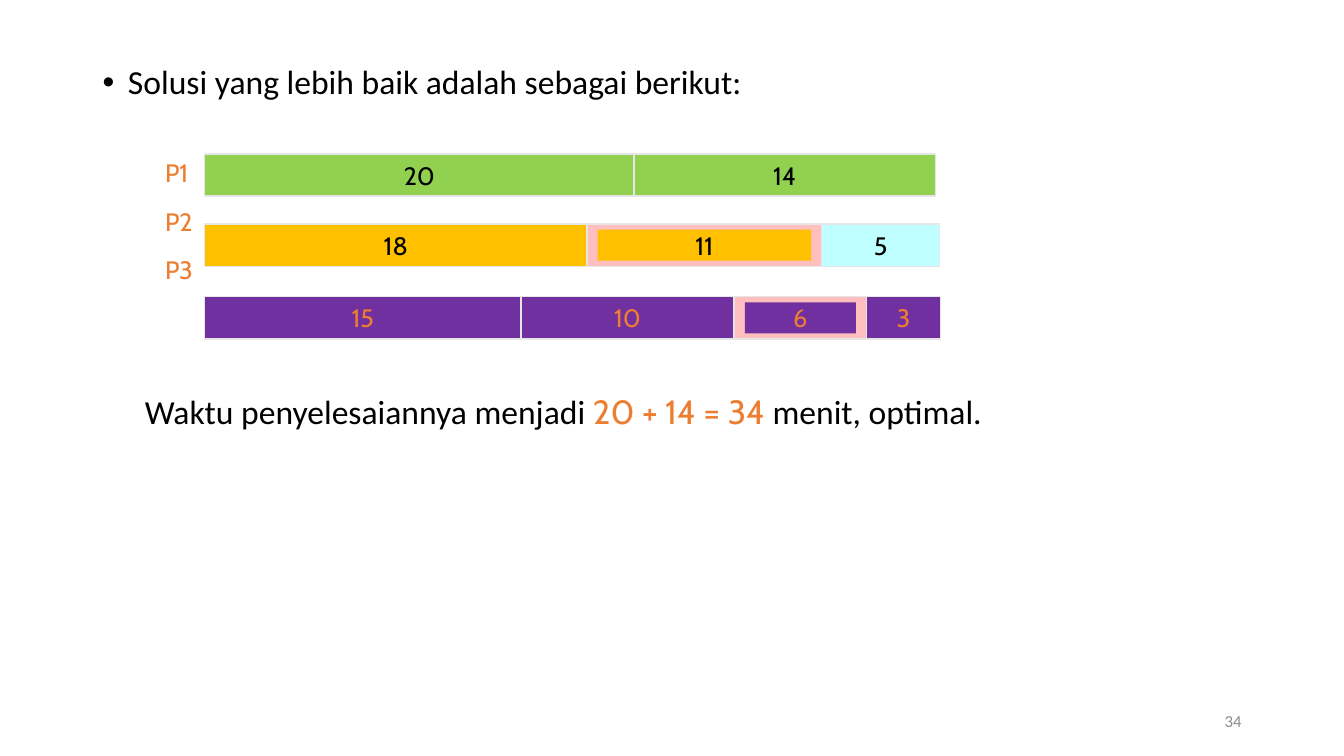
from lxml import etree
from pptx import Presentation
from pptx.dml.color import RGBColor
from pptx.enum.shapes import MSO_SHAPE
from pptx.enum.text import MSO_ANCHOR, PP_ALIGN
from pptx.oxml.ns import qn
from pptx.util import Cm, Pt

RECT = MSO_SHAPE.RECTANGLE
TOP, MIDDLE = MSO_ANCHOR.TOP, MSO_ANCHOR.MIDDLE
LEFT, CENTER, RIGHT = PP_ALIGN.LEFT, PP_ALIGN.CENTER, PP_ALIGN.RIGHT

COLORS = {
    "black": "000000", "orange": "ED7D31", "grey": "8C8C8C", "edge": "E7E6E6",
    "green": "92D050", "amber": "FFC000", "purple": "7030A0",
    "pink": "FFBFBF", "cyan": "BFFFFF",
}
BODY_FONT, CHART_FONT = "Calibri", "Cabin"

BAR_LEFT, BAR_HEIGHT = 5.16, 1.06
FRAME_X, FRAME_Y = 0.27, 0.14
# Per processor: top, text colour, then (minutes, width, fill, framed) per job
SCHEDULE = [
    (3.88, "black", [(20, 10.82, "green", False), (14, 7.59, "green", False)]),
    (5.65, "black", [(18, 9.63, "amber", False), (11, 5.92, "amber", True),
                     (5, 2.97, "cyan", False)]),
    (7.48, "orange", [(15, 7.97, "purple", False), (10, 5.37, "purple", False),
                      (6, 3.34, "purple", True), (3, 1.86, "purple", False)]),
]


def rgb(name):
    return RGBColor.from_string(COLORS[name])


def add_text(p, text, size=18, font=CHART_FONT, color="black", align=None):
    r = p.add_run()
    r.text = text
    r.font.size, r.font.name = Pt(size), font
    r.font.color.rgb = rgb(color)
    if align is not None:
        p.alignment = align


class SlideBuilder:
    def __init__(self, prs):
        self.s = prs.slides.add_slide(prs.slide_layouts[1])
        title = self.s.shapes.title
        title.element.getparent().remove(title.element)

    def bullet(self, text, x, y, w, h):
        sp = self.s.placeholders[1]
        sp.left, sp.top, sp.width, sp.height = Cm(x), Cm(y), Cm(w), Cm(h)
        p = sp.text_frame.paragraphs[0]
        add_text(p, text, size=24, font=BODY_FONT)
        p.line_spacing, p.space_before = 0.9, Pt(10)
        pPr = p._p.get_or_add_pPr()
        indent = Cm(0.64)
        pPr.set("marL", str(indent))
        pPr.set("indent", str(-indent))
        etree.SubElement(pPr, qn("a:buFont")).set("typeface", "Arial")
        etree.SubElement(pPr, qn("a:buChar")).set("char", "•")

    def text_box(self, x, y, w, h, anchor=TOP):
        tf = self.s.shapes.add_textbox(Cm(x), Cm(y), Cm(w), Cm(h)).text_frame
        tf.word_wrap, tf.vertical_anchor = True, anchor
        return tf

    def block(self, x, y, w, h, fill, edge=None):
        sp = self.s.shapes.add_shape(RECT, Cm(x), Cm(y), Cm(w), Cm(h))
        sp.shadow.inherit = False
        sp.fill.solid()
        sp.fill.fore_color.rgb = rgb(fill)
        if edge:
            sp.line.color.rgb = rgb(edge)
            sp.line.width = Pt(1)
        else:
            sp.line.fill.background()
        return sp

    def job(self, minutes, x, y, w, fill, color, framed):
        """Draw one job; a framed one sits inside a pink border."""
        sp = self.block(x, y, w, BAR_HEIGHT, "pink" if framed else fill, "edge")
        if framed:
            sp = self.block(x + FRAME_X, y + FRAME_Y, w - 2 * FRAME_X,
                            BAR_HEIGHT - 2 * FRAME_Y, fill)
        tf = sp.text_frame
        tf.word_wrap, tf.vertical_anchor = False, MIDDLE
        add_text(tf.paragraphs[0], str(minutes), color=color, align=CENTER)

    def processor_labels(self, names, x, y, w, h):
        tf = self.text_box(x, y, w, h)
        for i, name in enumerate(names):
            p = tf.add_paragraph() if i else tf.paragraphs[0]
            p.line_spacing, p.space_before = 1.2, Pt(9 if i else 0)
            add_text(p, name, color="orange", align=LEFT)


def main():
    prs = Presentation()
    prs.slide_width, prs.slide_height = Cm(33.87), Cm(19.05)
    slide = SlideBuilder(prs)
    slide.bullet("Solusi yang lebih baik adalah sebagai berikut:",
                 2.33, 1.52, 29.21, 15.65)

    for top, color, jobs in SCHEDULE:
        x = BAR_LEFT
        for minutes, width, fill, framed in jobs:
            slide.job(minutes, x, top, width, fill, color, framed)
            x += width
    slide.processor_labels(["P1", "P2", "P3"], 3.91, 3.68, 1.68, 4.9)

    p = slide.text_box(3.4, 9.73, 24, 1.27).paragraphs[0]
    add_text(p, "Waktu penyelesaiannya menjadi ", size=24, font=BODY_FONT)
    add_text(p, "20 + 14 = 34 ", size=24, color="orange")
    add_text(p, "menit, optimal.", size=24, font=BODY_FONT)

    p = slide.text_box(23.92, 17.66, 7.62, 1.01, MIDDLE).paragraphs[0]
    add_text(p, "34", size=12, font=BODY_FONT, color="grey", align=RIGHT)
    prs.save("out.pptx")


if __name__ == "__main__":
    main()
